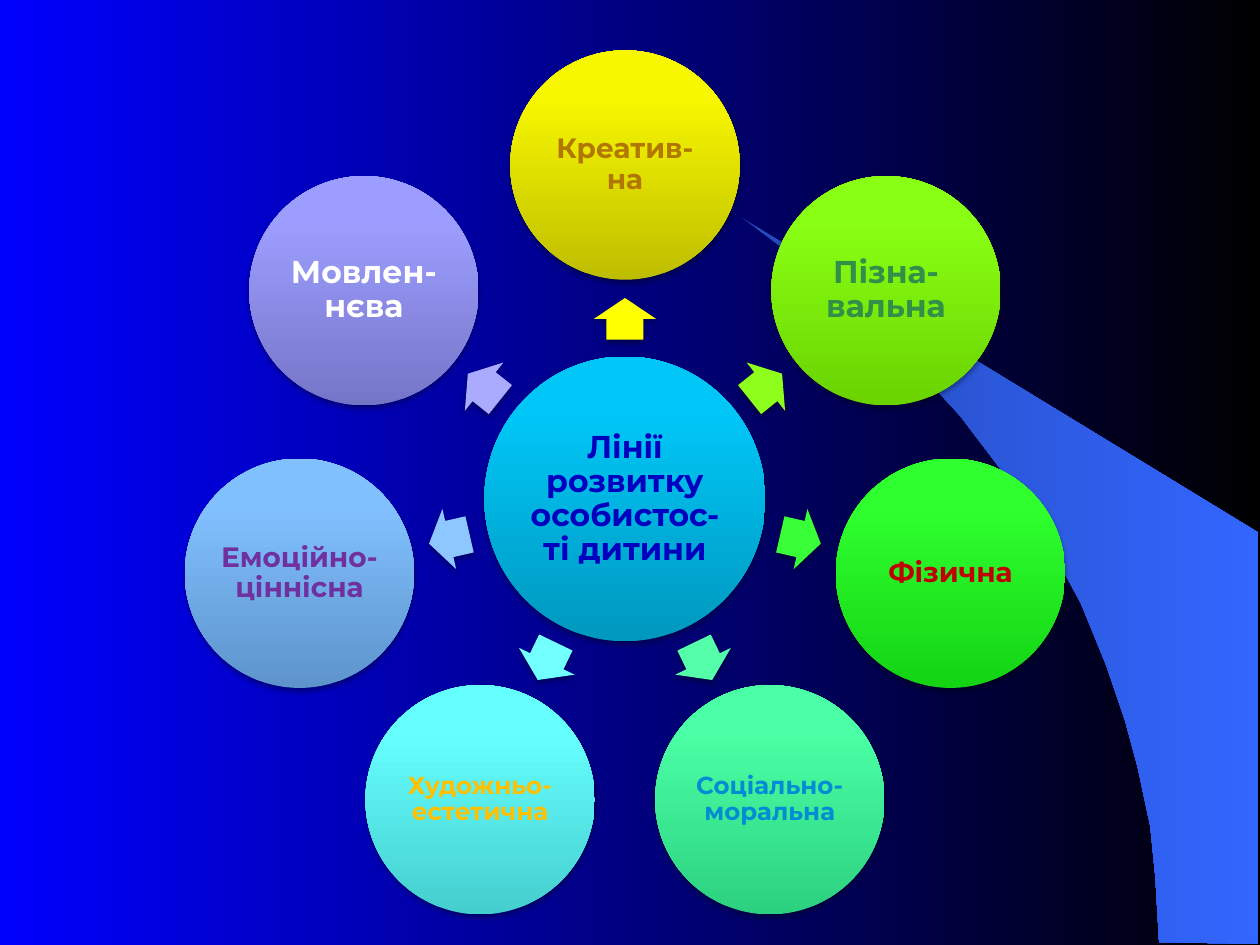
"""Build a radial slide of the seven lines of a child's personal development."""
from copy import deepcopy
from math import cos, radians, sin

from pptx import Presentation
from pptx.dml.color import RGBColor
from pptx.enum.shapes import MSO_SHAPE as Shape
from pptx.enum.text import MSO_ANCHOR as Anchor, PP_ALIGN as Align
from pptx.oxml import parse_xml
from pptx.oxml.ns import nsdecls
from pptx.util import Inches, Pt


def palette(*codes):
    """Turn hex codes into colours."""
    return tuple(RGBColor.from_string(code) for code in codes)


BACKGROUND = palette("0000FF", "000000")
SWEEP = palette("2449B6", "3366FF")
HUB = palette("0098BE", "00C6F7", "00C7F8")
HUB_TEXT = RGBColor(0x00, 0x00, 0xBF)
YELLOW = palette("BEBE00", "F7F700", "F8F800")
LIME = palette("6AD300", "89FF14", "8AFF15")
GREEN = palette("14D414", "2FFF2F", "30FF30")
MINT = palette("2CD17F", "4AFFA5", "4CFFA5")
CYAN = palette("45CECE", "66FFFF", "68FFFF")
SKY = palette("5D94CB", "81C0FF", "83C1FF")
LAVENDER = palette("7575C8", "9D9DFF", "9F9FFF")
ARROWS = palette("FFFF00", "8EFF1C", "39FF39", "55FFAA", "71FFFF", "8EC6FF", "AAAAFF")
TEXTS = palette("B27700", "309049", "C00000", "008CD4", "FFC000", "7030A0", "FFFFFF")

LINES = [
    ("Креатив-на", 16, YELLOW),
    ("Пізна-вальна", 18, LIME),
    ("Фізична", 16, GREEN),
    ("Соціально-моральна", 14, MINT),
    ("Художньо-естетична", 14, CYAN),
    ("Емоційно-ціннісна", 16, SKY),
    ("Мовлен-нєва", 18, LAVENDER),
]
SWEEP_POINTS = [
    (9.2, 7.48), (9.99, 7.49), (9.99, 4.23), (5.89, 1.73), (6.24, 1.99), (6.53, 2.22),
    (6.85, 2.5), (7.16, 2.8), (7.62, 3.3), (8.03, 3.84), (8.32, 4.31), (8.58, 4.79),
    (8.78, 5.28), (8.93, 5.72), (9.03, 6.09), (9.13, 6.56), (9.17, 6.96),
]
CENTER_X, CENTER_Y = 4.96, 3.96
CIRCLE_ORBIT, ARROW_ORBIT = 2.65, 1.43


class SlideBuilder:
    """Hold the style and the current slide."""

    font_name = "Montserrat"
    line_spacing = 0.9

    def __init__(self, slide):
        self.slide = slide

    def gradient(self, element, fill, colors, angle):
        """Fill with two colours, or with three that meet at 80 %."""
        fill.gradient()
        fill.gradient_angle = angle
        stop_list = element.xpath(".//a:gsLst")[0]
        if len(colors) == 3:
            stop_list.append(deepcopy(stop_list[-1]))
        positions = (0, 0.8, 1) if len(colors) == 3 else (0, 1)
        for stop, color, position in zip(fill.gradient_stops, colors, positions):
            stop.color.rgb = color
            stop.position = position

    def background(self, colors):
        """Paint the slide background."""
        self.gradient(self.slide.element, self.slide.background.fill, colors, 0)

    def sweep(self, points, colors):
        """Draw the curved band."""
        corners = [(Inches(x), Inches(y)) for x, y in points]
        builder = self.slide.shapes.build_freeform(*corners[0])
        builder.add_line_segments(corners[1:], close=True)
        shape = builder.convert_to_shape()
        shape.shadow.inherit = False
        shape.line.fill.background()
        self.gradient(shape.element, shape.fill, colors, 0)

    def centered_shape(self, kind, x, y, width, height):
        """Add an unlined shape with a soft shadow around a centre point."""
        shape = self.slide.shapes.add_shape(
            kind, Inches(x - width / 2), Inches(y - height / 2), Inches(width), Inches(height))
        shape.line.fill.background()
        shape.shadow.inherit = False
        shape.element.xpath(".//a:effectLst")[0].append(parse_xml(
            f'<a:outerShdw {nsdecls("a")} blurRad="{Pt(3.1)}" dist="{Pt(1.8)}" dir="5400000" '
            'rotWithShape="0"><a:srgbClr val="000000"><a:alpha val="35000"/></a:srgbClr>'
            '</a:outerShdw>'))
        return shape

    def circle(self, x, y, width, height, colors, text, size, text_color, side_inset=0.02):
        """Add a shaded circle with a centred label."""
        shape = self.centered_shape(Shape.OVAL, x, y, width, height)
        self.gradient(shape.element, shape.fill, colors, 90)
        frame = shape.text_frame
        frame.text = text
        frame.word_wrap = True
        frame.vertical_anchor = Anchor.MIDDLE
        frame.margin_left = frame.margin_right = Inches(side_inset)
        frame.margin_top = frame.margin_bottom = Inches(0.02)
        paragraph = frame.paragraphs[0]
        paragraph.alignment = Align.CENTER
        paragraph.line_spacing = self.line_spacing
        font = paragraph.runs[0].font
        font.name, font.size, font.bold = self.font_name, Pt(size), True
        font.color.rgb = text_color

    def arrow(self, x, y, angle, color):
        """Add a block arrow that points along the angle."""
        shape = self.centered_shape(Shape.RIGHT_ARROW, x, y, 0.33, 0.49)
        shape.adjustments[0] = 0.6
        shape.adjustments[1] = 0.5
        shape.rotation = angle % 360
        shape.fill.solid()
        shape.fill.fore_color.rgb = color


def orbit_point(radius, angle):
    """Return the point at an angle around the hub."""
    return (CENTER_X + radius * cos(radians(angle)), CENTER_Y + radius * sin(radians(angle)))


def main():
    """Build and save the presentation."""
    presentation = Presentation()
    presentation.slide_width, presentation.slide_height = Inches(10), Inches(7.5)
    builder = SlideBuilder(presentation.slides.add_slide(presentation.slide_layouts[6]))
    builder.background(BACKGROUND)
    builder.sweep(SWEEP_POINTS, SWEEP)
    builder.circle(CENTER_X, CENTER_Y, 2.23, 2.26, HUB,
                   "Лінії розвитку особистос-ті дитини", 18, HUB_TEXT, side_inset=0)
    for index, (text, size, colors) in enumerate(LINES):
        angle = -90 + index * 360 / len(LINES)
        builder.arrow(*orbit_point(ARROW_ORBIT, angle), angle, ARROWS[index])
        builder.circle(*orbit_point(CIRCLE_ORBIT, angle), 1.82, 1.82, colors,
                       text, size, TEXTS[index])
    presentation.save("out.pptx")


if __name__ == "__main__":
    main()
